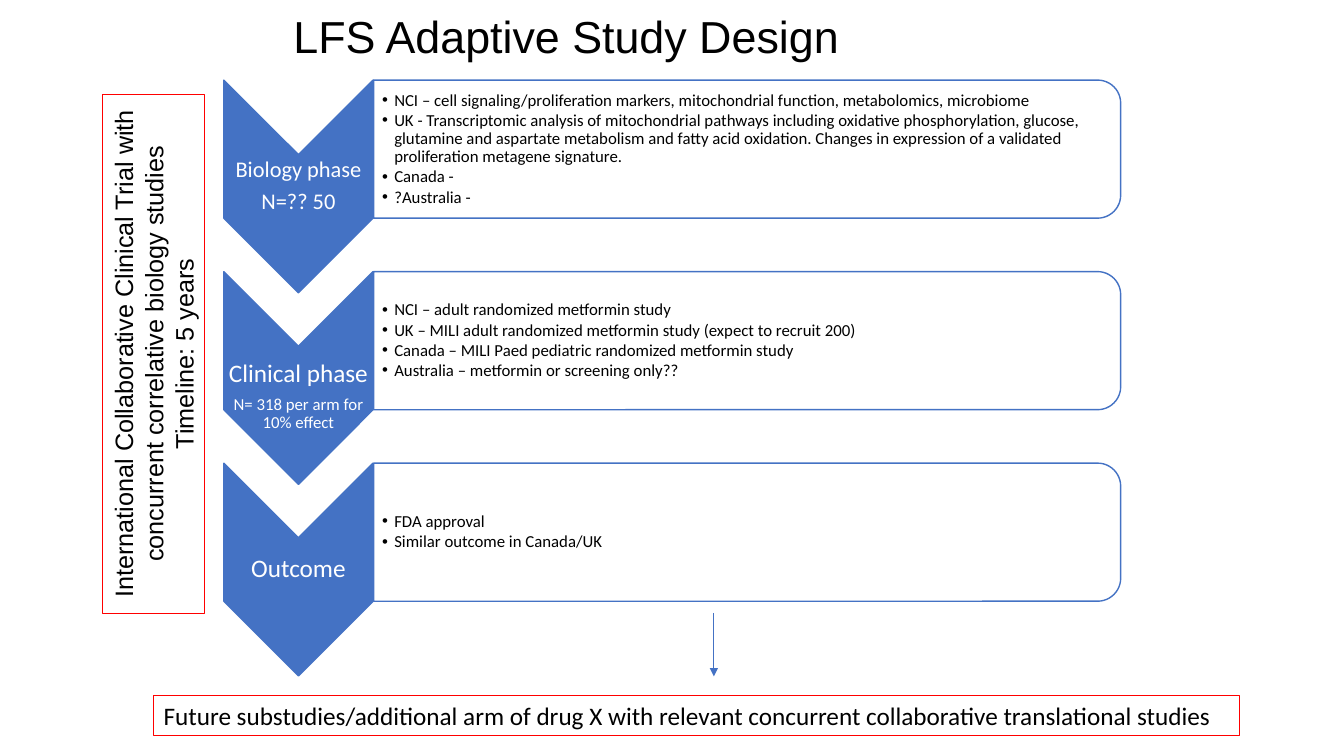
from lxml.etree import SubElement
from pptx import Presentation
from pptx.dml.color import RGBColor
from pptx.enum.shapes import MSO_CONNECTOR as Connector, MSO_SHAPE as Shape
from pptx.enum.text import MSO_ANCHOR as Anchor, MSO_AUTO_SIZE as AutoSize, PP_ALIGN as Align
from pptx.oxml.ns import qn
from pptx.util import Inches, Pt

COLORS = {"blue": "4472C4", "white": "FFFFFF", "black": "000000", "red": "FF0000"}

PHASES = [
    ([("Biology phase", 16), ("N=?? 50", 16)], 0, [
        "NCI – cell signaling/proliferation markers, mitochondrial function, metabolomics, microbiome",
        "UK - Transcriptomic analysis of mitochondrial pathways including oxidative phosphorylation, "
        "glucose, glutamine and aspartate metabolism and fatty acid oxidation. Changes in expression "
        "of a validated proliferation metagene signature.",
        "Canada -",
        "?Australia -",
    ]),
    ([("Clinical phase", 18), ("N= 318 per arm for 10% effect", 12)], 0.19, [
        "NCI – adult randomized metformin study",
        "UK – MILI adult randomized metformin study (expect to recruit 200)",
        "Canada – MILI Paed pediatric randomized metformin study",
        "Australia – metformin or screening only??",
    ]),
    ([("Outcome", 18)], 0, ["FDA approval", "Similar outcome in Canada/UK"]),
]


def rgb(name):
    return RGBColor.from_string(COLORS[name])


class StudySlide:
    def __init__(self, slide, font="Calibri"):
        self.slide = slide
        self.font = font

    def place(self, item, left, top, width, height):
        item.left, item.top = Inches(left), Inches(top)
        item.width, item.height = Inches(width), Inches(height)

    def add_text(self, frame, lines, color="black", font=None, align=Align.LEFT,
                 spacing=1.0, after=0, margins=None, wrap=True):
        frame.word_wrap = wrap
        frame.auto_size = AutoSize.NONE
        frame.vertical_anchor = Anchor.MIDDLE
        if margins:
            (frame.margin_left, frame.margin_top,
             frame.margin_right, frame.margin_bottom) = map(Inches, margins)
        for index, (words, size) in enumerate(lines):
            paragraph = frame.add_paragraph() if index else frame.paragraphs[0]
            paragraph.alignment = align
            paragraph.line_spacing = spacing
            paragraph.space_before, paragraph.space_after = Pt(0), Pt(after)
            run = paragraph.add_run()
            run.text = words
            run.font.name, run.font.size = font or self.font, Pt(size)
            run.font.bold = False
            run.font.color.rgb = rgb(color)

    def title(self, words):
        heading = self.slide.shapes.title
        self.place(heading, 2.81, 0.24, 7.46, 0.3)
        self.add_text(heading.text_frame, [(words, 32)], font="Arial", spacing=0.9)

    def shape(self, kind, center_x, center_y, width, height, rotation=0,
              fill=None, line="blue", weight=1):
        item = self.slide.shapes.add_shape(
            kind, Inches(center_x - width / 2), Inches(center_y - height / 2),
            Inches(width), Inches(height))
        item.rotation = rotation
        item.shadow.inherit = False
        if fill:
            item.fill.solid()
            item.fill.fore_color.rgb = rgb(fill)
        else:
            item.fill.background()
        item.line.color.rgb = rgb(line)
        item.line.width = Pt(weight)
        return item

    def label(self, lines, left, top, width, height):
        box = self.slide.shapes.add_textbox(
            Inches(left), Inches(top), Inches(width), Inches(height))
        self.add_text(box.text_frame, lines, color="white", align=Align.CENTER,
                      spacing=0.9, after=5.5, margins=[0.01] * 4)

    def bullets(self, body, items, left, top, width, height):
        self.place(body, left, top, width, height)
        self.add_text(body.text_frame, [(item, 12) for item in items],
                      spacing=0.9, after=1.5, margins=[0.09, 0.01, 0.01, 0.01])
        for paragraph in body.text_frame.paragraphs:
            properties = paragraph._p.get_or_add_pPr()
            properties.set("marL", str(Inches(0.12)))
            properties.set("indent", str(Inches(-0.12)))
            SubElement(properties, qn("a:buFont"), typeface="Arial")
            SubElement(properties, qn("a:buChar"), char="•")
        tree = body.element.getparent()
        tree.append(body.element)

    def framed(self, lines, center_x, center_y, width, height, rotation=0, **style):
        frame = self.shape(Shape.RECTANGLE, center_x, center_y, width, height,
                           rotation, line="red", weight=0.75)
        self.add_text(frame.text_frame, [(line, 18) for line in lines], wrap=False, **style)

    def arrow(self, x, top, bottom):
        line = self.slide.shapes.add_connector(
            Connector.STRAIGHT, Inches(x), Inches(top), Inches(x), Inches(bottom))
        line.line.color.rgb = rgb("blue")
        line.line.width = Pt(0.5)
        properties = line.element.spPr
        SubElement(properties.find(qn("a:ln")), qn("a:tailEnd"), type="triangle")
        SubElement(properties, qn("a:effectLst"))

    def phase(self, body, center_y, heading, heading_drop, items):
        panel_y = center_y - 0.37
        self.shape(Shape.CHEVRON, 2.96, center_y, 2.11, 1.48, 90, fill="blue")
        self.label(heading, 2.22, center_y - 0.32 + heading_drop, 1.48, 0.63)
        self.shape(Shape.ROUND_2_SAME_RECTANGLE, 7.41, panel_y, 1.37, 7.41, 90, fill="white")
        self.bullets(body, items, 3.7, panel_y - 0.62, 7.34, 1.24)


def main():
    deck = Presentation()
    deck.slide_width, deck.slide_height = Inches(13.33), Inches(7.5)
    slide = deck.slides.add_slide(deck.slide_layouts.get_by_name("Comparison"))
    study = StudySlide(slide)
    study.title("LFS Adaptive Study Design")

    bodies = [holder for holder in slide.placeholders if holder.placeholder_format.idx]
    for row, (body, phase) in enumerate(zip(bodies, PHASES)):
        study.phase(body, 1.85 + 1.9 * row, *phase)
    for unused in bodies[len(PHASES):]:
        unused.element.getparent().remove(unused.element)

    study.arrow(7.08, 6.08, 6.71)
    study.framed(["International Collaborative Clinical Trial with",
                  "concurrent correlative biology studies",
                  "Timeline: 5 years"],
                 1.52, 3.51, 5.15, 1.01, 270, font="Arial", align=Align.CENTER)
    study.framed(["Future substudies/additional arm of drug X with relevant "
                  "concurrent collaborative translational studies"],
                 6.91, 7.1, 10.77, 0.4)
    deck.save("out.pptx")


if __name__ == "__main__":
    main()
